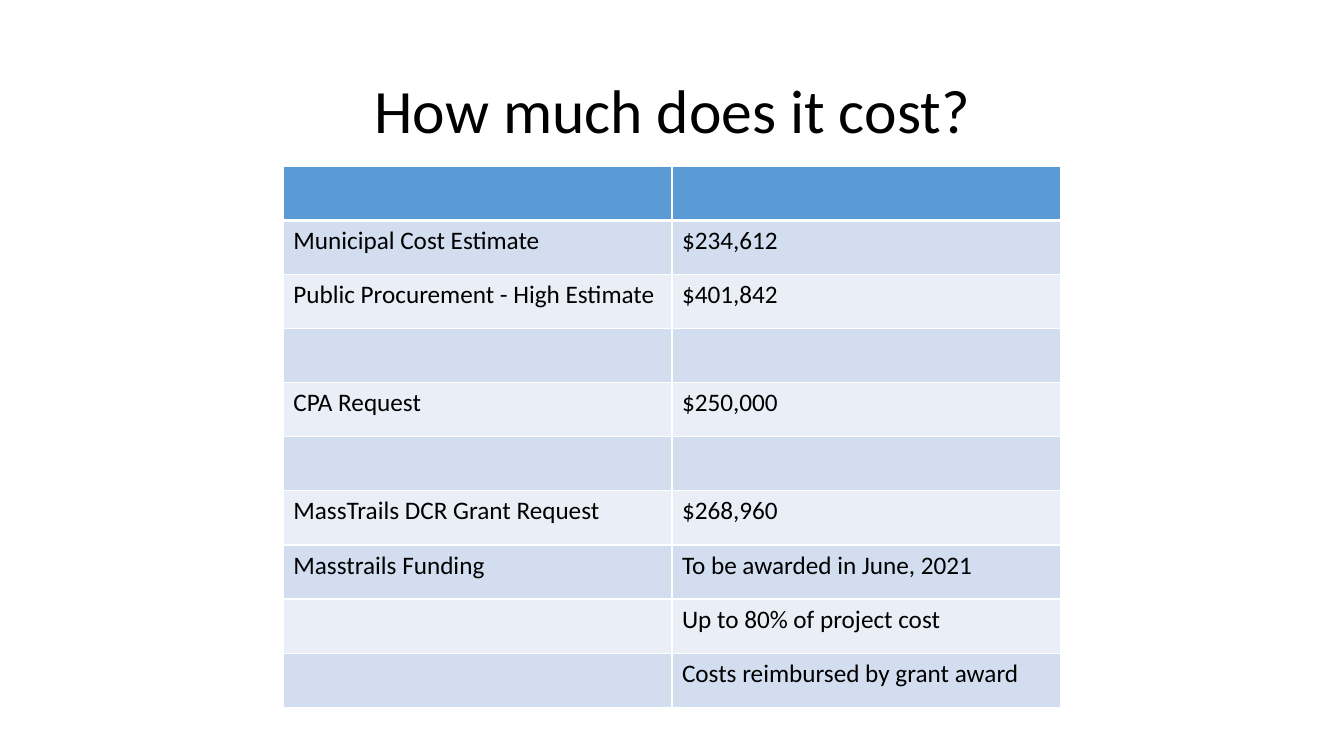
from lxml.etree import SubElement
from pptx import Presentation
from pptx.dml.color import RGBColor
from pptx.enum.text import MSO_ANCHOR, PP_ALIGN
from pptx.oxml.ns import qn
from pptx.util import Inches, Pt

SLIDE_WIDTH, SLIDE_HEIGHT = 13.33, 7.5
TITLE_BOX = (0.92, 0.4, 11.5, 1.45)
COST_BOX = (2.81, 1.65, 7.71, 5.37)
HEADER_FILL = "5B9BD5"
BAND_FILLS = ("EAEFF7", "D2DEEF")
TITLE_FONT = {"name": "Calibri", "size": Pt(44), "bold": False}
CELL_FONT = {"name": "Calibri", "size": Pt(18), "bold": False}
COSTS = [
    ("", ""),
    ("Municipal Cost Estimate", "$234,612"),
    ("Public Procurement - High Estimate", "$401,842"),
    ("", ""),
    ("CPA Request", "$250,000"),
    ("", ""),
    ("MassTrails DCR Grant Request", "$268,960"),
    ("Masstrails Funding", "To be awarded in June, 2021"),
    ("", "Up to 80% of project cost"),
    ("", "Costs reimbursed by grant award"),
]


def paint(color_format, hex_color):
    """Set a colour from a hex string."""
    color_format.rgb = RGBColor.from_string(hex_color)


def apply(target, values):
    """Set each attribute of the target from a dict."""
    for name, value in values.items():
        setattr(target, name, value)


def add_borders(cell, widths):
    """Draw white cell borders with the given widths in points."""
    properties = cell._tc.get_or_add_tcPr()
    for side, width in widths.items():
        border = SubElement(properties, qn(f"a:ln{side}"), w=str(Pt(width)))
        fill = SubElement(border, qn("a:solidFill"))
        SubElement(fill, qn("a:srgbClr"), val="FFFFFF")


def add_title(slide, box, wording):
    """Place the slide title in its box."""
    title = slide.shapes.title
    apply(title, dict(zip(("left", "top", "width", "height"), map(Inches, box))))
    title.text_frame.text = wording
    title.text_frame.vertical_anchor = MSO_ANCHOR.MIDDLE
    heading = title.text_frame.paragraphs[0]
    apply(heading, {"alignment": PP_ALIGN.CENTER, "line_spacing": 0.9})
    apply(heading.font, TITLE_FONT)
    paint(heading.font.color, "000000")


def fill_cell(cell, wording, row):
    """Write and format one cell according to its row."""
    add_borders(cell, {"L": 1, "R": 1, "T": 3 if row == 1 else 1, "B": 3 if row == 0 else 1})
    cell.fill.solid()
    paint(cell.fill.fore_color, BAND_FILLS[row % 2] if row else HEADER_FILL)
    cell.text = wording
    entry = cell.text_frame.paragraphs[0]
    apply(entry.font, CELL_FONT)
    paint(entry.font.color, "000000")


def add_cost_table(slide, box, costs):
    """Lay out the costs as equal rows and columns of the box."""
    frame = slide.shapes.add_table(len(costs), len(costs[0]), *map(Inches, box))
    for row, entries in enumerate(costs):
        for column, wording in enumerate(entries):
            fill_cell(frame.table.cell(row, column), wording, row)


def main():
    """Build and save the cost slide."""
    deck = Presentation()
    apply(deck, {"slide_width": Inches(SLIDE_WIDTH), "slide_height": Inches(SLIDE_HEIGHT)})
    slide = deck.slides.add_slide(deck.slide_layouts[5])
    add_title(slide, TITLE_BOX, "How much does it cost?")
    add_cost_table(slide, COST_BOX, COSTS)
    deck.save("out.pptx")


if __name__ == "__main__":
    main()
